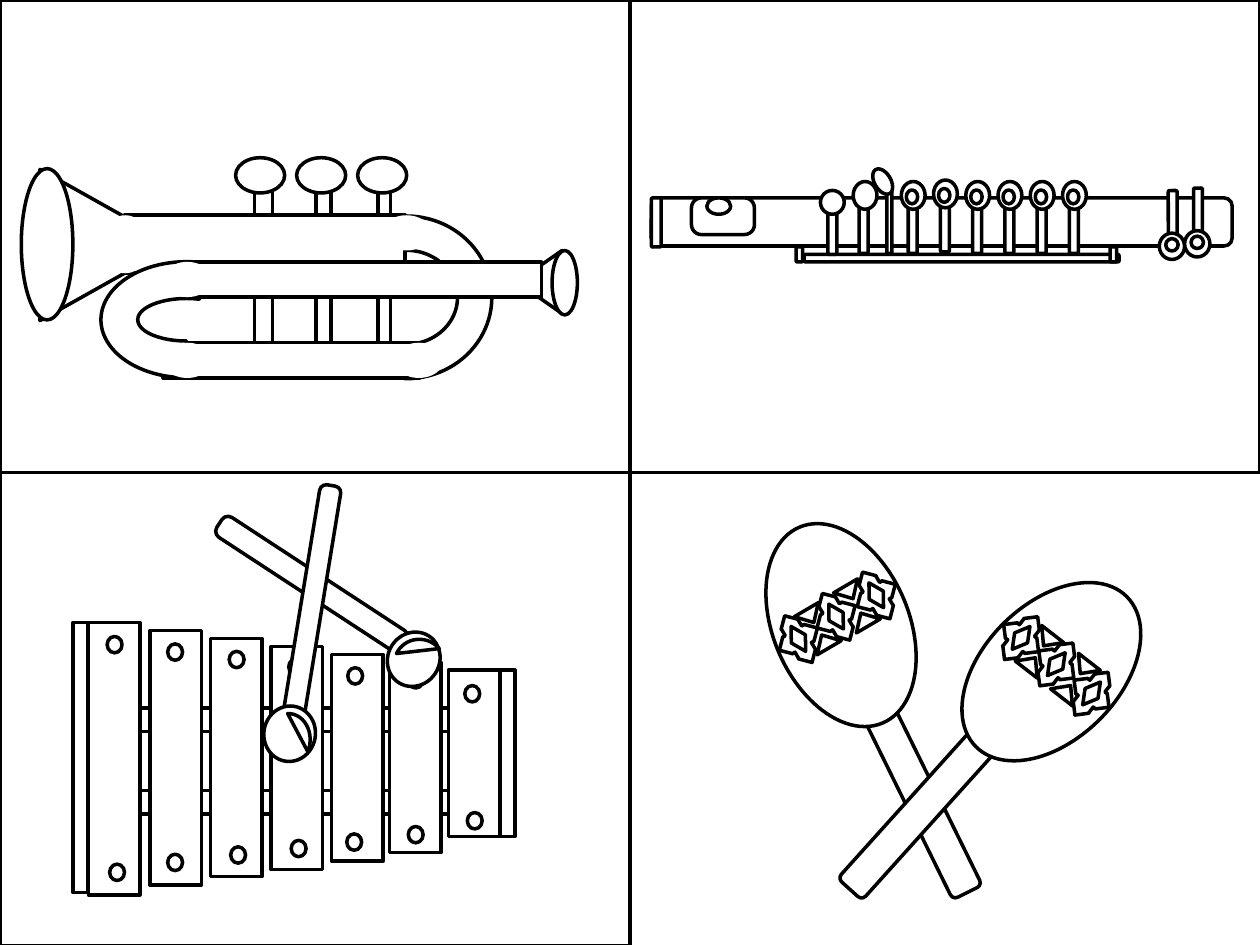
"""Draw four line-art instruments, one in each quarter of the slide."""
from dataclasses import dataclass
from typing import NamedTuple

from pptx import Presentation
from pptx.dml.color import RGBColor
from pptx.enum.shapes import MSO_SHAPE
from pptx.shapes.autoshape import Shape
from pptx.util import Cm, Pt

WHITE = RGBColor(0xFF, 0xFF, 0xFF)
BLACK = RGBColor(0x00, 0x00, 0x00)

RECT = MSO_SHAPE.RECTANGLE
ROUND = MSO_SHAPE.ROUNDED_RECTANGLE
OVAL = MSO_SHAPE.OVAL
TRIANGLE = MSO_SHAPE.ISOSCELES_TRIANGLE
ARC = MSO_SHAPE.BLOCK_ARC
CHORD = MSO_SHAPE.CHORD
STAR = MSO_SHAPE.QUAD_ARROW
DIAMOND = MSO_SHAPE.DIAMOND

PANEL_W, PANEL_H = 12.7, 9.53
STAR_ADJ = (0.432, 0.225, 0.225)
CHORD_ADJ = (49.519, 118.378)


class Point(NamedTuple):
    x: float
    y: float


@dataclass(frozen=True)
class Part:
    kind: MSO_SHAPE
    x: float
    y: float
    w: float
    h: float
    rot: float = 0
    adj: tuple[float, ...] = ()
    outlined: bool = True


@dataclass(frozen=True)
class Bar:
    x: float
    h: float
    top_hole: Point
    bottom_hole: Point


@dataclass(frozen=True)
class Maraca:
    handle: Point
    handle_rot: float
    head: Point
    head_rot: float
    band_rot: float
    stars: tuple[Point, ...]
    upper: tuple[Point, ...]
    lower: tuple[Point, ...]


BARS = (
    Bar(1.78, 5.49, Point(2.16, 12.83), Point(2.21, 17.42)),
    Bar(3.02, 5.13, Point(3.38, 12.98), Point(3.38, 17.22)),
    Bar(4.24, 4.80, Point(4.62, 13.13), Point(4.65, 17.07)),
    Bar(5.46, 4.50, Point(5.82, 13.28), Point(5.87, 16.94)),
    Bar(6.68, 4.17, Point(7.01, 13.46), Point(6.99, 16.81)),
    Bar(7.85, 3.84, Point(8.23, 13.54), Point(8.23, 16.66)),
    Bar(9.04, 3.35, Point(9.37, 13.82), Point(9.42, 16.38)),
)

MARACAS = (
    Maraca(Point(18.19, 13.77), 333.8, Point(14.81, 11.23), 247, 329.6,
           (Point(15.65, 12.34), Point(16.41, 11.89), Point(17.22, 11.46)),
           (Point(16.05, 12.27), Point(16.84, 11.79)),
           (Point(16.36, 12.78), Point(17.15, 12.34))),
    Maraca(Point(18.29, 14.05), 42, Point(19.05, 12.17), 315.2, 37.8,
           (Point(20.14, 12.32), Point(20.85, 12.85), Point(21.56, 13.44)),
           (Point(20.85, 12.75), Point(21.59, 13.31)),
           (Point(20.50, 13.23), Point(21.21, 13.79))),
)


def draw(shapes, part: Part) -> Shape:
    sp = shapes.add_shape(part.kind, Cm(part.x), Cm(part.y), Cm(part.w), Cm(part.h))
    sp.rotation = part.rot
    for i, value in enumerate(part.adj):
        sp.adjustments[i] = value
    sp.shadow.inherit = False
    sp.fill.solid()
    sp.fill.fore_color.rgb = WHITE
    if part.outlined:
        sp.line.color.rgb = BLACK
        sp.line.width = Pt(2)
    else:
        sp.line.fill.background()
    return sp


def draw_group(shapes, parts: list[Part]) -> None:
    group = shapes.add_group_shape()
    for part in parts:
        draw(group.shapes, part)


def trumpet() -> list[Part]:
    stems = [Part(RECT, 5.99, 5.18, 3.51, 0.25, 90),
             Part(RECT, 4.88, 5.13, 3.28, 0.30, 90),
             Part(RECT, 3.66, 5.08, 3.30, 0.36, 90)]
    tubes = [Part(TRIANGLE, 10.24, 5.23, 1.27, 0.91, 270),
             Part(TRIANGLE, 0.64, 3.58, 3.05, 2.72, 90),
             Part(RECT, 2.51, 4.34, 5.66, 1.17),
             Part(OVAL, 0.43, 3.40, 1.04, 3.05),
             Part(ARC, 6.55, 4.27, 3.28, 3.45, 90, (108, 0.486, 0.211)),
             Part(RECT, 3.28, 6.91, 5.18, 0.71),
             Part(ARC, 2.59, 4.72, 2.34, 3.45, 270, (108, 19.061, 0.317)),
             Part(RECT, 3.76, 5.28, 7.16, 0.71),
             Part(OVAL, 11.13, 5.05, 0.51, 1.30)]
    caps = [Part(OVAL, 4.75 + 1.23 * i, 3.18, 0.99, 0.71) for i in range(3)]
    joints = [Part(OVAL, x, y, 0.99, h, outlined=False)
              for x, y, h in ((7.70, 4.34, 0.71), (3.28, 5.28, 0.71), (3.28, 6.91, 0.71),
                              (7.95, 6.91, 0.71), (2.03, 4.34, 1.17))]
    return stems + tubes + caps + joints


def flute() -> list[Part]:
    parts = [Part(ROUND, 16.21, 5.13, 6.35, 0.15),
             Part(ROUND, 13.13, 3.99, 11.71, 0.97),
             Part(ROUND, 16.69, 4.27, 0.18, 0.86),
             Part(OVAL, 16.54, 3.84, 0.48, 0.48),
             Part(ROUND, 17.32, 4.14, 0.18, 0.97),
             Part(OVAL, 17.20, 3.66, 0.48, 0.56)]
    for i in range(6):
        dx, dy = 0.65 * i, -0.03 if i == 1 else 0
        parts += [Part(ROUND, 18.31 + dx, 4.14 + dy, 0.18, 0.97),
                  Part(OVAL, 18.17 + dx, 3.66 + dy, 0.48, 0.56),
                  Part(OVAL, 18.27 + dx, 3.83 + dy, 0.23, 0.28)]
    for dx, dy in ((0, 0), (0.51, -0.05)):
        parts += [Part(ROUND, 23.55 + dx, 3.84 + dy, 0.18, 0.94, 180),
                  Part(OVAL, 23.37 + dx, 4.70 + dy, 0.51, 0.53, 180),
                  Part(OVAL, 23.50 + dx, 4.81 + dy, 0.25, 0.25, 180)]
    return parts + [Part(ROUND, 13.13, 3.99, 0.20, 0.99),
                    Part(ROUND, 13.94, 3.99, 1.27, 0.74, adj=(0.272,)),
                    Part(OVAL, 14.25, 3.99, 0.48, 0.33),
                    Part(ROUND, 22.38, 4.98, 0.13, 0.30),
                    Part(ROUND, 16.05, 4.98, 0.13, 0.30),
                    Part(ROUND, 17.88, 3.84, 0.10, 1.27),
                    Part(OVAL, 17.63, 3.38, 0.33, 0.56, 329.5)]


def xylophone() -> list[Part]:
    parts = [Part(RECT, 1.73, 14.27, 8.31, 0.48, 180),
             Part(RECT, 1.78, 15.93, 8.31, 0.48, 180)]
    for i, bar in enumerate(BARS):
        parts.append(Part(RECT, bar.x, 12.55 + 0.16 * i, 1.04, bar.h, 180))
        parts += [Part(OVAL, *hole, 0.30, 0.33, 180)
                  for hole in (bar.top_hole, bar.bottom_hole)]
    return parts + [Part(RECT, 10.08, 13.51, 0.30, 3.35, 180),
                    Part(RECT, 1.47, 12.55, 0.30, 5.44, 180),
                    Part(ROUND, 4.06, 11.53, 4.45, 0.48, 213.2, (0.306,)),
                    Part(OVAL, 7.82, 12.73, 1.04, 1.12, 213.2),
                    Part(CHORD, 7.95, 12.88, 1.02, 1.04, 123.2, CHORD_ADJ),
                    Part(ROUND, 3.89, 11.94, 4.80, 0.43, 279.3, (0.306,)),
                    Part(OVAL, 5.28, 14.27, 1.12, 1.04, 279.3),
                    Part(CHORD, 5.31, 14.38, 0.94, 1.12, 189.3, CHORD_ADJ)]


def maraca(m: Maraca) -> list[Part]:
    parts = [Part(ROUND, *m.handle, 0.66, 4.45, m.handle_rot),
             Part(OVAL, *m.head, 4.29, 2.74, m.head_rot)]
    for star in m.stars:
        parts += [Part(STAR, *star, 0.89, 1.09, m.band_rot, STAR_ADJ),
                  Part(DIAMOND, star.x + 0.28, star.y + 0.25, 0.33, 0.58, m.band_rot)]
    for points, turn in ((m.upper, 180), (m.lower, 0)):
        parts += [Part(TRIANGLE, *p, 0.56, 0.30, (m.band_rot + turn) % 360) for p in points]
    return parts


def main() -> None:
    prs = Presentation()
    prs.slide_width, prs.slide_height = Cm(25.4), Cm(19.05)
    s = prs.slides.add_slide(prs.slide_layouts[6])
    for x, y in ((PANEL_W, 0), (0, 0)):
        draw(s.shapes, Part(RECT, x, y, PANEL_W, PANEL_H))
    draw_group(s.shapes, trumpet())
    draw_group(s.shapes, flute())
    draw(s.shapes, Part(RECT, 0, PANEL_H, PANEL_W, PANEL_H))
    draw_group(s.shapes, xylophone())
    draw_group(s.shapes, [part for m in MARACAS for part in maraca(m)])
    prs.save("out.pptx")


if __name__ == "__main__":
    main()
